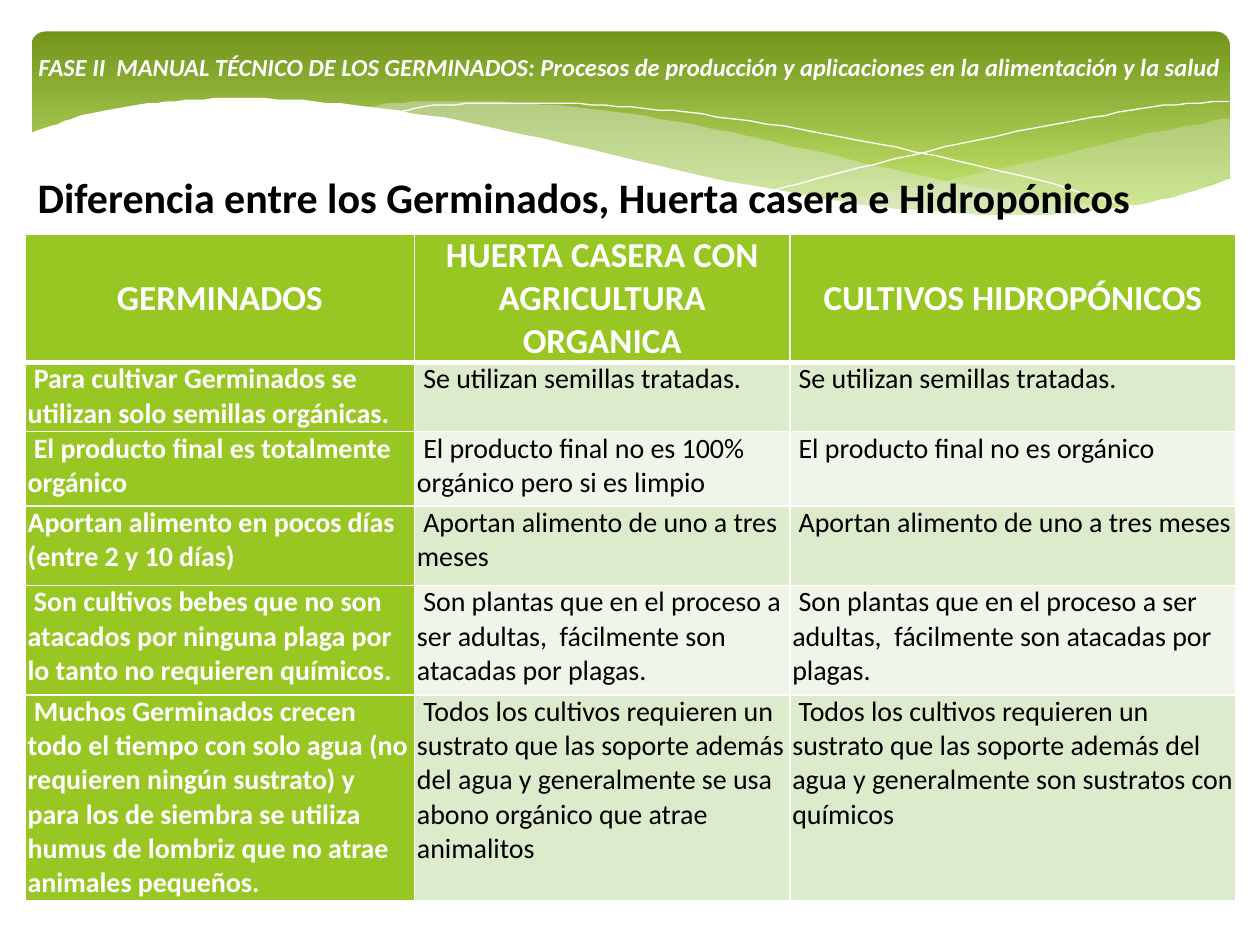
from dataclasses import dataclass

import pptx
import pptx.dml.color
import pptx.enum.text
import pptx.util
from pptx.enum.shapes import MSO_SHAPE
from pptx.oxml import parse_xml
from pptx.oxml.ns import nsdecls, qn

Pt = pptx.util.Pt
ALIGN = pptx.enum.text.PP_ALIGN
ANCHOR = pptx.enum.text.MSO_ANCHOR


@dataclass(frozen=True)
class Theme:
    font: str = "Calibri"
    white: str = "FFFFFF"
    black: str = "000000"
    green: str = "98C723"
    band_top: str = "72951A"
    band_bottom: str = "C5E672"
    mist: str = "E7ECED"
    stripes: tuple = ("DDEBCD", "EFF5E8")
    banner_size: int = 14
    heading_size: int = 24
    header_size: int = 20
    body_size: int = 16


THEME = Theme()

BACK_WAVE = [
    [(702.7, 67.7), (663, 75), (620, 85), (542, 103), (476, 115.2)],
    [(476, 115.2), (518, 120.2), (562, 123.8), (601, 123.8), (640, 119.5),
     (673, 112.3), (702.7, 101.5)],
]
MIDDLE_WAVE = [
    [(643, 120.2), (602.6, 114.5), (533.5, 102.2), (453, 83.5), (399.6, 72),
     (352, 64.1), (302.4, 59), (260, 57.6), (225.4, 59), (206, 61.9)],
    [(206, 61.9), (246, 67.7), (323, 83.5), (407.5, 103), (468, 113.8),
     (520, 121), (573, 124.6), (610.6, 123.8), (643, 120.2)],
]
FALLING_LINE = [
    [(222.5, 64.8), (247.7, 60.5), (288.7, 58.7), (337.7, 59.8), (383.8, 63.4),
     (437.8, 70.6), (500.4, 82.1), (572.4, 97.9), (653, 119.5)],
]
RISING_LINE = [
    [(441.4, 108.7), (500.4, 93.6), (558.7, 79.9), (623.5, 67), (665, 60.5),
     (702, 57.6)],
]
FRONT_WAVE = [
    [(703.4, 101.5), (669.6, 113), (630, 120.2), (582.5, 123.1), (535.7, 121),
     (481, 115.2), (417, 103.7), (321.8, 82.1), (262.8, 69.1), (210.2, 61.2),
     (165.6, 56.9), (127.4, 56.2), (95, 58.3), (61.2, 62.6), (33, 70.6), (16.6, 77)],
    [(16.6, 161.3), (703.4, 161.3)],
]

HEADERS = ["GERMINADOS", "HUERTA CASERA CON AGRICULTURA ORGANICA", "CULTIVOS HIDROPÓNICOS"]
ROWS = [
    ["Para cultivar Germinados se utilizan solo semillas orgánicas.",
     "Se utilizan semillas tratadas.",
     "Se utilizan semillas tratadas."],
    ["El producto final es totalmente orgánico",
     "El producto final no es 100% orgánico pero si es limpio",
     "El producto final no es orgánico"],
    ["Aportan alimento en pocos días (entre 2 y 10 días)",
     "Aportan alimento de uno a tres meses",
     "Aportan alimento de uno a tres meses"],
    ["Son cultivos bebes que no son atacados por ninguna plaga por lo tanto no "
     "requieren químicos.",
     "Son plantas que en el proceso a ser adultas,  fácilmente son atacadas por plagas.",
     "Son plantas que en el proceso a ser adultas,  fácilmente son atacadas por plagas."],
    ["Muchos Germinados crecen todo el tiempo con solo agua (no requieren ningún "
     "sustrato) y para los de siembra se utiliza humus de lombriz que no atrae "
     "animales pequeños.",
     "Todos los cultivos requieren un sustrato que las soporte además del agua y "
     "generalmente se usa abono orgánico que atrae animalitos",
     "Todos los cultivos requieren un sustrato que las soporte además del agua y "
     "generalmente son sustratos con químicos"],
]
FLUSH_CELL = (3, 0)
COL_SHARES = [222.5, 214.5, 255]
ROW_SHARES = [73, 39.6, 42.5, 45.4, 62.6, 117.5]


def rgb(value):
    return pptx.dml.color.RGBColor.from_string(value)


def style(p, size, color, bold=False, italic=False, align=ALIGN.LEFT):
    p.alignment = align
    f = p.font
    f.name, f.size, f.bold, f.italic = THEME.font, Pt(size), bold, italic
    f.color.rgb = rgb(color)


def smooth(knots, steps=6):
    if len(knots) < 3:
        return knots
    ends = [knots[0], *knots, knots[-1]]
    pts = [knots[0]]
    for a, b, c, d in zip(ends, ends[1:], ends[2:], ends[3:]):
        for i in range(1, steps + 1):
            t = i / steps
            pts.append(tuple(
                (2 * q + (r - o) * t + (2 * o - 5 * q + 4 * r - s) * t ** 2
                 + (3 * q - o - 3 * r + s) * t ** 3) / 2
                for o, q, r, s in zip(a, b, c, d)))
    return pts


def add_wave(slide, box, arcs, fill=None, alpha=None):
    x, y = box[:2]
    pts = [(x + px - 18, y + py - 18) for arc in arcs for px, py in smooth(arc)]
    fb = slide.shapes.build_freeform(*pts[0], scale=Pt(1))
    fb.add_line_segments(pts[1:], close=fill is not None)
    sp = fb.convert_to_shape()
    sp.shadow.inherit = False
    if fill is None:
        sp.fill.background()
        sp.line.color.rgb = rgb(THEME.white)
        sp.line.width = Pt(0)
        return
    sp.fill.solid()
    sp.fill.fore_color.rgb = rgb(fill)
    sp.line.fill.background()
    if alpha is not None:
        clr = sp._element.spPr.find(qn("a:solidFill"))[0]
        clr.append(parse_xml(f'<a:alpha {nsdecls("a")} val="{alpha * 1000}"/>'))


def add_text(slide, box, text, anchor, **look):
    tf = slide.shapes.add_textbox(*map(Pt, box)).text_frame
    tf.word_wrap = True
    tf.vertical_anchor = anchor
    p = tf.paragraphs[0]
    p.text = text
    style(p, **look)


def add_banner(slide, box):
    sp = slide.shapes.add_shape(MSO_SHAPE.ROUNDED_RECTANGLE, *map(Pt, box))
    sp.adjustments[0] = 0.07
    sp.shadow.inherit = False
    sp.line.fill.background()
    sp.fill.gradient()
    sp.fill.gradient_angle = 270
    colors = (THEME.band_top, THEME.band_bottom)
    for stop, color, pos in zip(sp.fill.gradient_stops, colors, (0, 0.9)):
        stop.color.rgb = rgb(color)
        stop.position = pos
    add_wave(slide, box, BACK_WAVE, THEME.mist, 29)
    add_wave(slide, box, MIDDLE_WAVE, THEME.mist, 40)
    add_wave(slide, box, FALLING_LINE)
    add_wave(slide, box, RISING_LINE)
    add_wave(slide, box, FRONT_WAVE, THEME.white)
    x, y, w, _ = box
    add_text(slide, (x - 18, y - 8.6, w + 35.3, 57),
             "FASE II  MANUAL TÉCNICO DE LOS GERMINADOS: Procesos de producción y "
             "aplicaciones en la alimentación y la salud", ANCHOR.MIDDLE,
             size=THEME.banner_size, color=THEME.white, bold=True, italic=True,
             align=ALIGN.CENTER)


def add_heading(slide, box):
    add_text(slide, box, "Diferencia entre los Germinados, Huerta casera e Hidropónicos",
             ANCHOR.TOP, size=THEME.heading_size, color=THEME.black, bold=True,
             align=ALIGN.JUSTIFY)


def set_borders(cell, top, bottom):
    widths = {"L": 1, "R": 1, "T": top, "B": bottom}
    for i, (side, width) in enumerate(widths.items()):
        cell._tc.get_or_add_tcPr().insert(i, parse_xml(
            f'<a:ln{side} {nsdecls("a")} w="{Pt(width)}"><a:solidFill>'
            f'<a:srgbClr val="{THEME.white}"/></a:solidFill></a:ln{side}>'))


def add_comparison(slide, box):
    x, y, w, h = box
    rows = [HEADERS, *ROWS]
    table = slide.shapes.add_table(len(rows), len(HEADERS), *map(Pt, box)).table
    for col, share in zip(table.columns, COL_SHARES):
        col.width = Pt(w * share / sum(COL_SHARES))
    for row, share in zip(table.rows, ROW_SHARES):
        row.height = Pt(h * share / sum(ROW_SHARES))
    for r, texts in enumerate(rows):
        for c, text in enumerate(texts):
            cell = table.cell(r, c)
            head, strong = r == 0, r == 0 or c == 0
            cell.margin_left = cell.margin_right = Pt(1.4)
            cell.margin_top = cell.margin_bottom = Pt(0)
            cell.vertical_anchor = ANCHOR.MIDDLE if head else ANCHOR.TOP
            cell.fill.solid()
            cell.fill.fore_color.rgb = rgb(THEME.green if strong else THEME.stripes[(r - 1) % 2])
            set_borders(cell, 3 if r == 1 else 1, 3 if head else 1)
            p = cell.text_frame.paragraphs[0]
            p.text = text
            if not head and (r, c) != FLUSH_CELL:
                p._p.get_or_add_pPr().set("indent", str(Pt(3.6)))
            style(p, THEME.header_size if head else THEME.body_size,
                  THEME.white if strong else THEME.black, bold=strong,
                  align=ALIGN.CENTER if head else ALIGN.LEFT)


def main():
    prs = pptx.Presentation()
    prs.slide_width, prs.slide_height = Pt(720), Pt(540)
    slide = prs.slides.add_slide(prs.slide_layouts[6])
    add_banner(slide, (18, 18, 684.7, 112.3))
    add_heading(slide, (14.4, 94.3, 689, 37))
    add_comparison(slide, (14.4, 134, 692, 380.6))
    prs.save("out.pptx")


if __name__ == "__main__":
    main()
